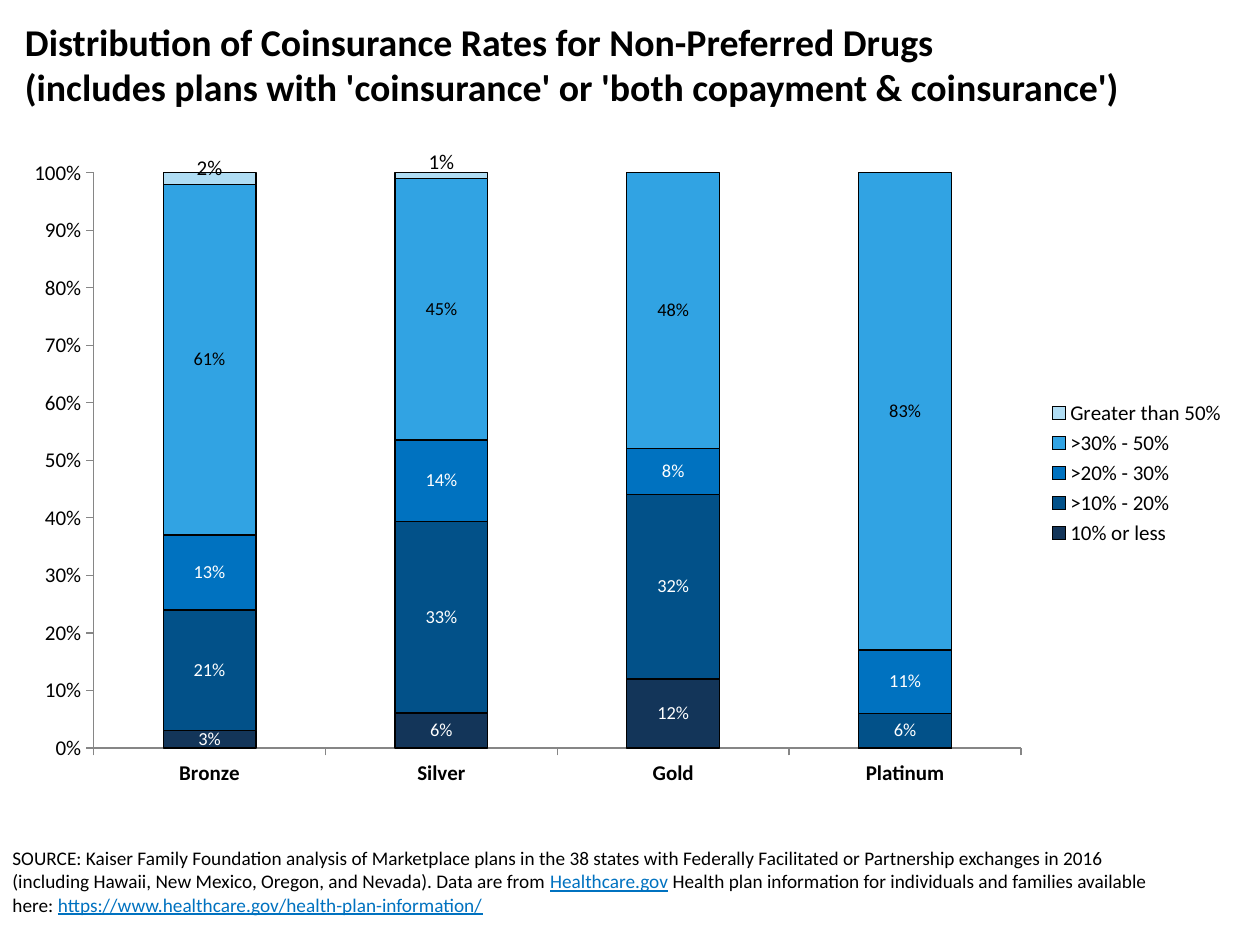
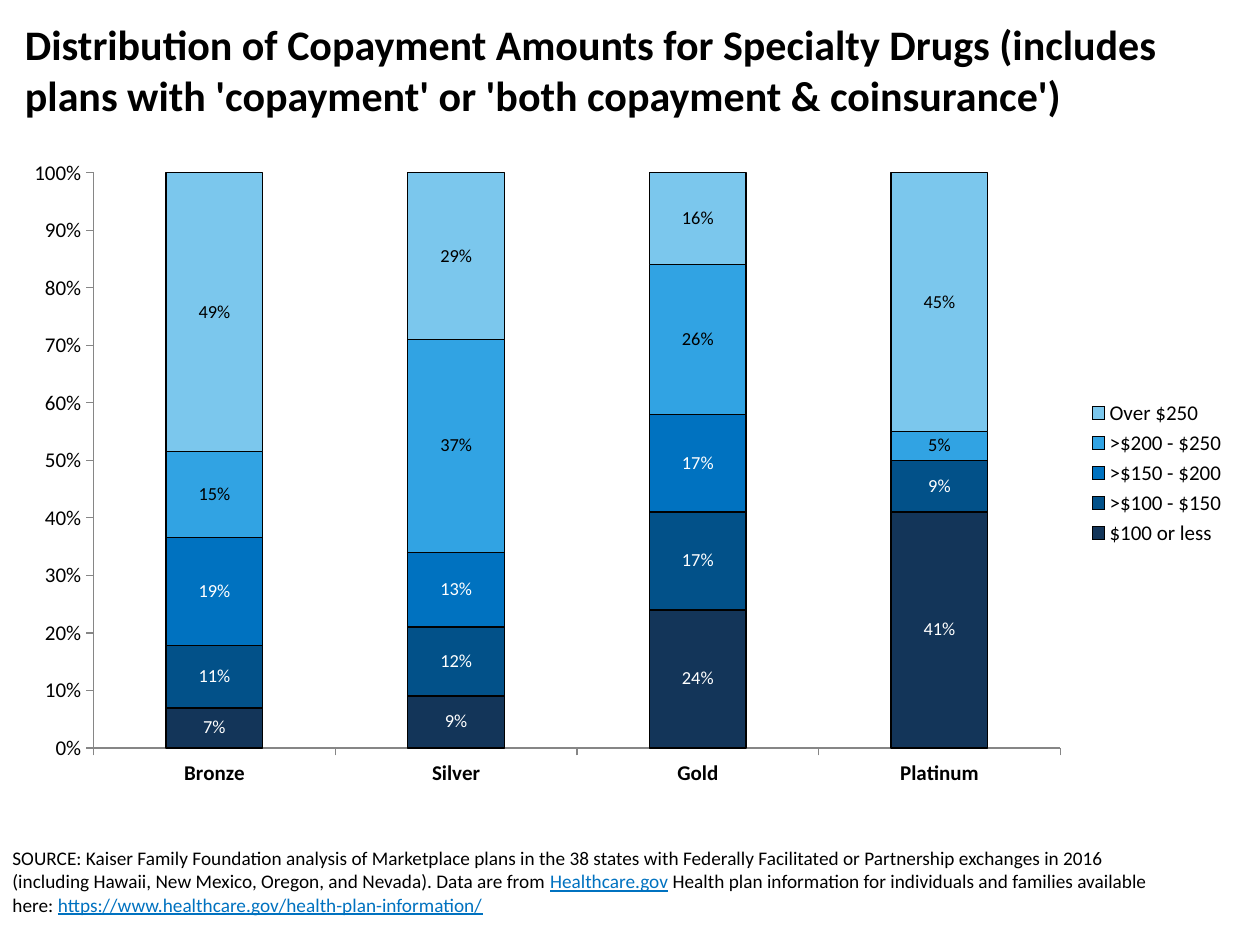
from dataclasses import dataclass

from lxml import etree
from pptx import Presentation
from pptx.chart.data import CategoryChartData
from pptx.dml.color import RGBColor
from pptx.enum.chart import XL_CHART_TYPE as ChartType
from pptx.enum.chart import XL_LEGEND_POSITION as LegendPosition
from pptx.enum.chart import XL_TICK_MARK as TickMark
from pptx.enum.text import MSO_ANCHOR as Anchor
from pptx.oxml.ns import qn
from pptx.util import Pt


@dataclass(frozen=True)
class Theme:
    font: str = "Calibri"
    text: str = "000000"
    light_text: str = "FFFFFF"
    link: str = "0072C0"
    axis: str = "868686"
    navy: str = "133559"
    deep: str = "025189"
    blue: str = "0072C0"
    sky: str = "31A3E3"
    pale: str = "7BC7ED"
    palest: str = "B0DDF4"
    chart_size: float = 12
    label_size: float = 10.5
    source_size: float = 11


THEME = Theme()
METALS = ["Bronze", "Silver", "Gold", "Platinum"]
DARK_FILLS = (THEME.navy, THEME.deep, THEME.blue)

# (text, is link) pieces of the source line
SOURCE = [
    ("SOURCE: Kaiser Family Foundation analysis of Marketplace plans in the 38 states with "
     "Federally Facilitated or Partnership exchanges in 2016 (including Hawaii, New Mexico, "
     "Oregon, and Nevada). Data are from ", False),
    ("Healthcare.gov", True),
    (" Health plan information for individuals and families available here: ", False),
    ("https://www.healthcare.gov/health-plan-information/", True),
]

# series: name, values by metal level, fill
COINSURANCE = [
    ("10% or less", (0.03, 0.06, 0.12, 0), THEME.navy),
    (">10% - 20%", (0.21, 0.33, 0.32, 0.06), THEME.deep),
    (">20% - 30%", (0.13, 0.14, 0.08, 0.11), THEME.blue),
    (">30% - 50%", (0.61, 0.45, 0.48, 0.83), THEME.sky),
    ("Greater than 50%", (0.02, 0.01, 0, 0), THEME.palest),
]
COPAYMENT = [
    ("$100 or less", (0.07, 0.09, 0.24, 0.41), THEME.navy),
    (">$100 - $150", (0.11, 0.12, 0.17, 0.09), THEME.deep),
    (">$150 - $200", (0.19, 0.13, 0.17, 0), THEME.blue),
    (">$200 - $250", (0.15, 0.37, 0.26, 0.05), THEME.sky),
    ("Over $250", (0.49, 0.29, 0.16, 0.45), THEME.pale),
]


def rgb(color):
    return RGBColor.from_string(color)


def style_font(font, size, color=THEME.text, bold=False):
    font.name = THEME.font
    font.size = Pt(size)
    font.bold = bold
    font.color.rgb = rgb(color)


def add_text_box(slide, left, top, width, height):
    frame = slide.shapes.add_textbox(Pt(left), Pt(top), Pt(width), Pt(height)).text_frame
    frame.word_wrap = True
    frame.vertical_anchor = Anchor.TOP
    return frame


def add_title(slide, text, size):
    frame = add_text_box(slide, 7.2, 7.2, 705.6, 72)
    frame.text = text
    style_font(frame.paragraphs[0].font, size, bold=True)


def add_source(slide):
    paragraph = add_text_box(slide, 0, 480.24, 666, 60.48).paragraphs[0]
    style_font(paragraph.font, THEME.source_size)
    for text, is_link in SOURCE:
        run = paragraph.add_run()
        run.text = text
        if is_link:
            run.font.color.rgb = rgb(THEME.link)
            run.font.underline = True


def add_child(parent, tag, value):
    etree.SubElement(parent, qn(tag)).set("val", str(value))


def manual_layout(**settings):
    layout = etree.Element(qn("c:layout"))
    manual = etree.SubElement(layout, qn("c:manualLayout"))
    for name, value in settings.items():
        add_child(manual, f"c:{name}", value)
    return layout


def place_plot(chart, width):
    """Fix the inner plot area, as fractions of the chart frame."""
    plot_area = chart.plots[0]._element.getparent()
    for layout in plot_area.findall(qn("c:layout")):
        plot_area.remove(layout)
    plot_area.insert(0, manual_layout(
        layoutTarget="inner", xMode="edge", yMode="edge",
        x=0.068, y=0.039, w=width, h=0.883))


def hide_zero_labels(labels, values):
    zeros = [index for index, value in enumerate(values) if value == 0]
    for index in reversed(zeros):
        label = etree.Element(qn("c:dLbl"))
        add_child(label, "c:idx", index)
        add_child(label, "c:delete", 1)
        labels._element.insert(0, label)


def raise_label(point, offset):
    """Move a point's label up by a fraction of the chart height."""
    style_font(point.data_label.font, THEME.chart_size)
    label = point.data_label._get_or_add_dLbl()
    label.insert(1, manual_layout(x=0, y=-offset))


def style_series(series, values, fill):
    series.format.fill.solid()
    series.format.fill.fore_color.rgb = rgb(fill)
    series.format.line.color.rgb = rgb(THEME.text)
    series.format.line.width = Pt(0.75)
    labels = series.data_labels
    labels.show_value = True
    labels.number_format = "0%"
    labels.number_format_is_linked = False
    size = THEME.chart_size if fill == THEME.palest else THEME.label_size
    style_font(labels.font, size, THEME.light_text if fill in DARK_FILLS else THEME.text)
    hide_zero_labels(labels, values)


def style_axis(axis, bold=False):
    axis.has_major_gridlines = False
    axis.major_tick_mark = TickMark.OUTSIDE
    axis.minor_tick_mark = TickMark.NONE
    axis.format.line.color.rgb = rgb(THEME.axis)
    axis.format.line.width = Pt(0.75)
    style_font(axis.tick_labels.font, THEME.chart_size, bold=bold)


def add_rate_chart(slide, bands, plot_width):
    data = CategoryChartData(number_format="0%")
    data.categories = METALS
    for name, values, _ in bands:
        data.add_series(name, values)
    chart = slide.shapes.add_chart(
        ChartType.COLUMN_STACKED_100, Pt(5.76), Pt(84.24), Pt(702), Pt(372.24), data).chart
    style_font(chart.font, THEME.chart_size)
    chart.has_title = False
    chart.has_legend = True
    chart.legend.position = LegendPosition.RIGHT
    chart.legend.include_in_layout = False
    style_font(chart.legend.font, THEME.chart_size)

    plot = chart.plots[0]
    plot.gap_width = 150
    plot.overlap = 100
    plot.vary_by_categories = False
    for series, (_, values, fill) in zip(plot.series, bands):
        style_series(series, values, fill)

    style_axis(chart.category_axis, bold=True)
    value_axis = chart.value_axis
    style_axis(value_axis)
    value_axis.minimum_scale, value_axis.maximum_scale = 0, 1
    value_axis.major_unit = 0.1
    value_axis.tick_labels.number_format = "0%"
    value_axis.tick_labels.number_format_is_linked = False
    place_plot(chart, plot_width)
    return chart


def add_chart_slide(presentation, title, title_size, bands, plot_width):
    slide = presentation.slides.add_slide(presentation.slide_layouts[6])
    add_source(slide)
    add_title(slide, title, title_size)
    return add_rate_chart(slide, bands, plot_width)


def main():
    presentation = Presentation()
    presentation.slide_width, presentation.slide_height = Pt(720), Pt(540)

    coinsurance_chart = add_chart_slide(
        presentation,
        "Distribution of Coinsurance Rates for Non-Preferred Drugs\v"
        "(includes plans with 'coinsurance' or 'both copayment & coinsurance')",
        21.6, COINSURANCE, 0.755)
    top_band = coinsurance_chart.plots[0].series[-1]
    for index, offset in enumerate((0.016, 0.021)):
        raise_label(top_band.points[index], offset)

    add_chart_slide(
        presentation,
        "Distribution of Copayment Amounts for Specialty Drugs (includes "
        "plans with 'copayment' or 'both copayment & coinsurance')",
        24, COPAYMENT, 0.787)

    presentation.save("out.pptx")


if __name__ == "__main__":
    main()
